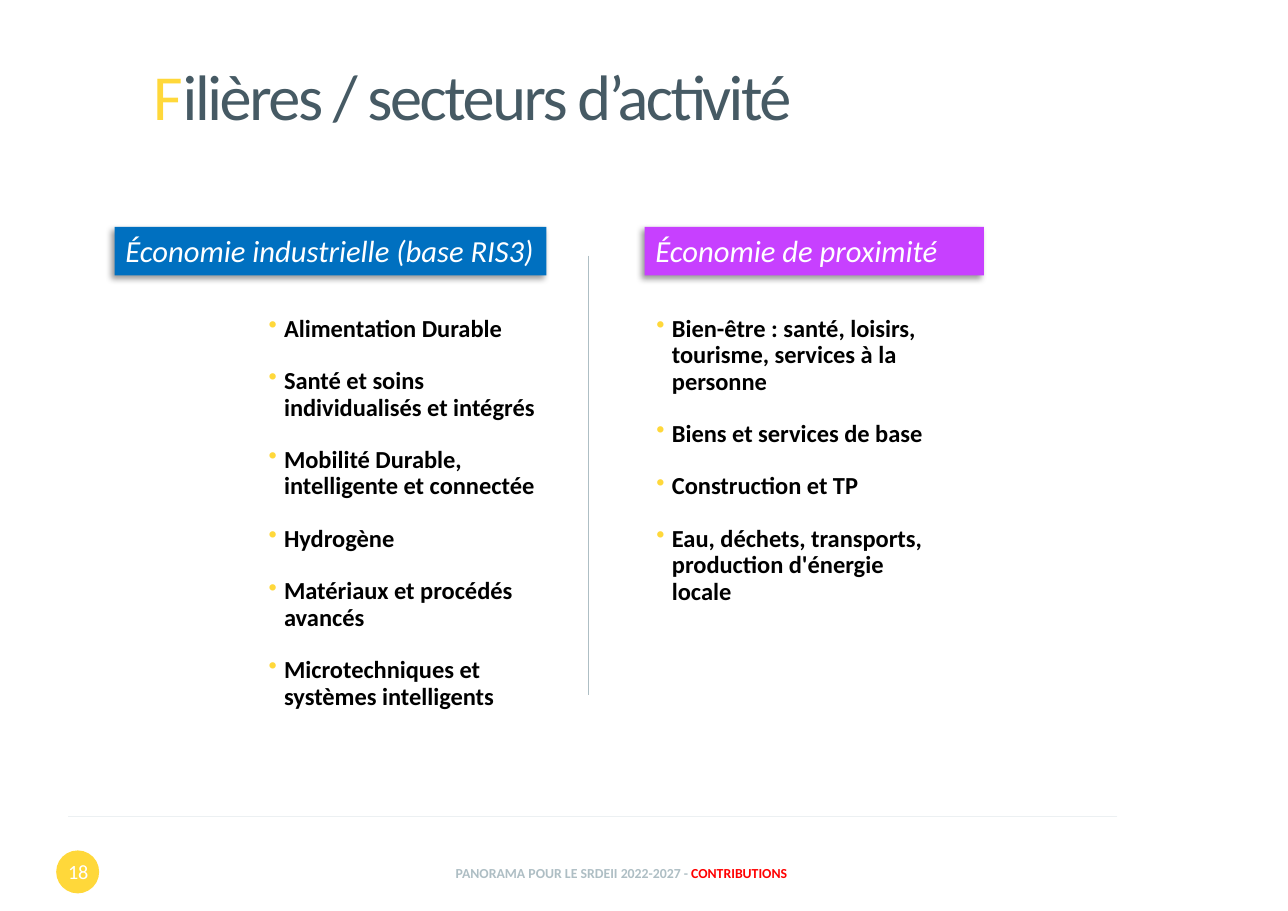
from pptx import Presentation
from pptx.dml.color import RGBColor
from pptx.enum.shapes import MSO_CONNECTOR, MSO_SHAPE
from pptx.enum.text import MSO_ANCHOR as Anchor, PP_ALIGN as Align
from pptx.oxml.ns import qn
from pptx.util import Inches, Pt
from lxml.etree import SubElement

FONT = "Calibri"
YELLOW, SLATE, GREY, WHITE = "FFD83A", "465A64", "AEBEC4", "FFFFFF"
COLUMN_TOP, LIST_TOP = 2.06, 2.82

INDUSTRY = [
    "Alimentation Durable",
    "Santé et soins individualisés et intégrés",
    "Mobilité Durable, intelligente et connectée",
    "Hydrogène",
    "Matériaux et procédés avancés",
    "Microtechniques et systèmes intelligents",
]
PROXIMITY = [
    "Bien-être : santé, loisirs, tourisme, services à la personne",
    "Biens et services de base",
    "Construction et TP",
    "Eau, déchets, transports, production d'énergie locale",
]


def rgb(value):
    return RGBColor.from_string(value)


def inches(box):
    return [Inches(length) for length in box]


def style(run, size, color, bold=False, italic=False):
    font = run.font
    font.name, font.size = FONT, Pt(size)
    font.bold, font.italic = bold, italic
    font.color.rgb = rgb(color)


def add_runs(paragraph, parts, size, bold=False):
    for words, color in parts:
        run = paragraph.add_run()
        run.text = words
        style(run, size, color, bold)


def add_panel(slide, kind, box, fill):
    panel = slide.shapes.add_shape(kind, *inches(box))
    panel.shadow.inherit = False
    panel.fill.solid()
    panel.fill.fore_color.rgb = rgb(fill)
    panel.line.fill.background()
    panel.text_frame.word_wrap = True
    panel.text_frame.vertical_anchor = Anchor.TOP
    return panel


def add_rule(slide, start, end, color):
    rule = slide.shapes.add_connector(MSO_CONNECTOR.STRAIGHT, *inches(start + end))
    rule.line.color.rgb = rgb(color)
    rule.line.width = Pt(0.5)
    SubElement(rule._element.spPr, qn("a:effectLst"))


def add_shadow(panel):
    effects = panel._element.spPr.find(qn("a:effectLst"))
    shadow = SubElement(effects, qn("a:outerShdw"), blurRad=str(Pt(4)),
                        dist=str(Pt(3)), dir=str(135 * 60000), rotWithShape="0")
    black = SubElement(shadow, qn("a:srgbClr"), val="000000")
    SubElement(black, qn("a:alpha"), val="40000")


def add_bullet(paragraph):
    props = paragraph._p.get_or_add_pPr()
    props.set("marL", str(Inches(0.15)))
    props.set("indent", str(Inches(-0.14)))
    color = SubElement(props, qn("a:buClr"))
    SubElement(color, qn("a:srgbClr"), val=YELLOW)
    SubElement(props, qn("a:buChar"), char="•")


def add_title(slide, box):
    title = slide.shapes.title
    title.left, title.top, title.width, title.height = inches(box)
    frame = title.text_frame
    frame.word_wrap = True
    frame.vertical_anchor = Anchor.BOTTOM
    heading = frame.paragraphs[0]
    heading.alignment = Align.LEFT
    heading.line_spacing = 0.7
    add_runs(heading, [("F", YELLOW), ("ilières / secteurs d’activité", SLATE)], 42)
    for run in heading.runs:
        run._r.get_or_add_rPr().set("spc", "-160")


def add_header(slide, box, words, fill):
    header = add_panel(slide, MSO_SHAPE.RECTANGLE, box, fill)
    add_shadow(header)
    label = header.text_frame.paragraphs[0]
    label.text = words
    label.alignment = Align.LEFT
    style(label.runs[0], 20, WHITE, italic=True)


def add_sectors(slide, box, sectors):
    frame = add_panel(slide, MSO_SHAPE.RECTANGLE, box, WHITE).text_frame
    frame.text = "\n".join(sectors)
    for index, sector in enumerate(frame.paragraphs):
        add_bullet(sector)
        sector.alignment = Align.LEFT
        sector.line_spacing = 0.9
        sector.space_before = Pt(2 if index else 0)
        sector.space_after = Pt(15)
        style(sector.runs[0], 16, "000000", bold=True)


def add_centred_text(slide, box, parts, size, bold=False):
    frame = slide.shapes.add_textbox(*inches(box)).text_frame
    frame.word_wrap = True
    frame.vertical_anchor = Anchor.MIDDLE
    frame.paragraphs[0].alignment = Align.CENTER
    add_runs(frame.paragraphs[0], parts, size, bold)


def add_footer(slide, left, top, width):
    add_rule(slide, (left + width, top), (left, top), "ECF0F2")
    # Page number badge
    add_panel(slide, MSO_SHAPE.OVAL, (left - 0.11, top + 0.31, 0.39, 0.39), YELLOW)
    add_centred_text(slide, (left - 0.17, top + 0.28, 0.52, 0.44), [("18", WHITE)], 13.2)
    # Document name
    add_centred_text(slide, (left + 0.5, top + 0.3, 9.04, 0.44),
                     [("PANORAMA POUR LE SRDEII 2022-2027 - ", GREY),
                      ("CONTRIBUTIONS", "FF0000")], 9, bold=True)


def main():
    deck = Presentation()
    deck.slide_width, deck.slide_height = Inches(11.69), Inches(8.27)
    slide = deck.slides.add_slide(deck.slide_layouts[5])

    add_title(slide, (1.29, 0.12, 6.22, 1.12))
    # Industrial economy
    add_header(slide, (1.04, COLUMN_TOP, 3.92, 0.44),
               "Économie industrielle (base RIS3)", "0070C0")
    add_sectors(slide, (2.33, LIST_TOP, 2.75, 3.72), INDUSTRY)
    # Local economy
    add_header(slide, (5.85, COLUMN_TOP, 3.08, 0.44), "Économie de proximité", "C740FF")
    add_sectors(slide, (5.85, LIST_TOP, 2.75, 2.75), PROXIMITY)
    # Divider between the columns
    add_rule(slide, (5.34, 2.32), (5.34, 6.31), GREY)
    add_footer(slide, 0.62, 7.41, 9.52)

    deck.save("out.pptx")


if __name__ == "__main__":
    main()
